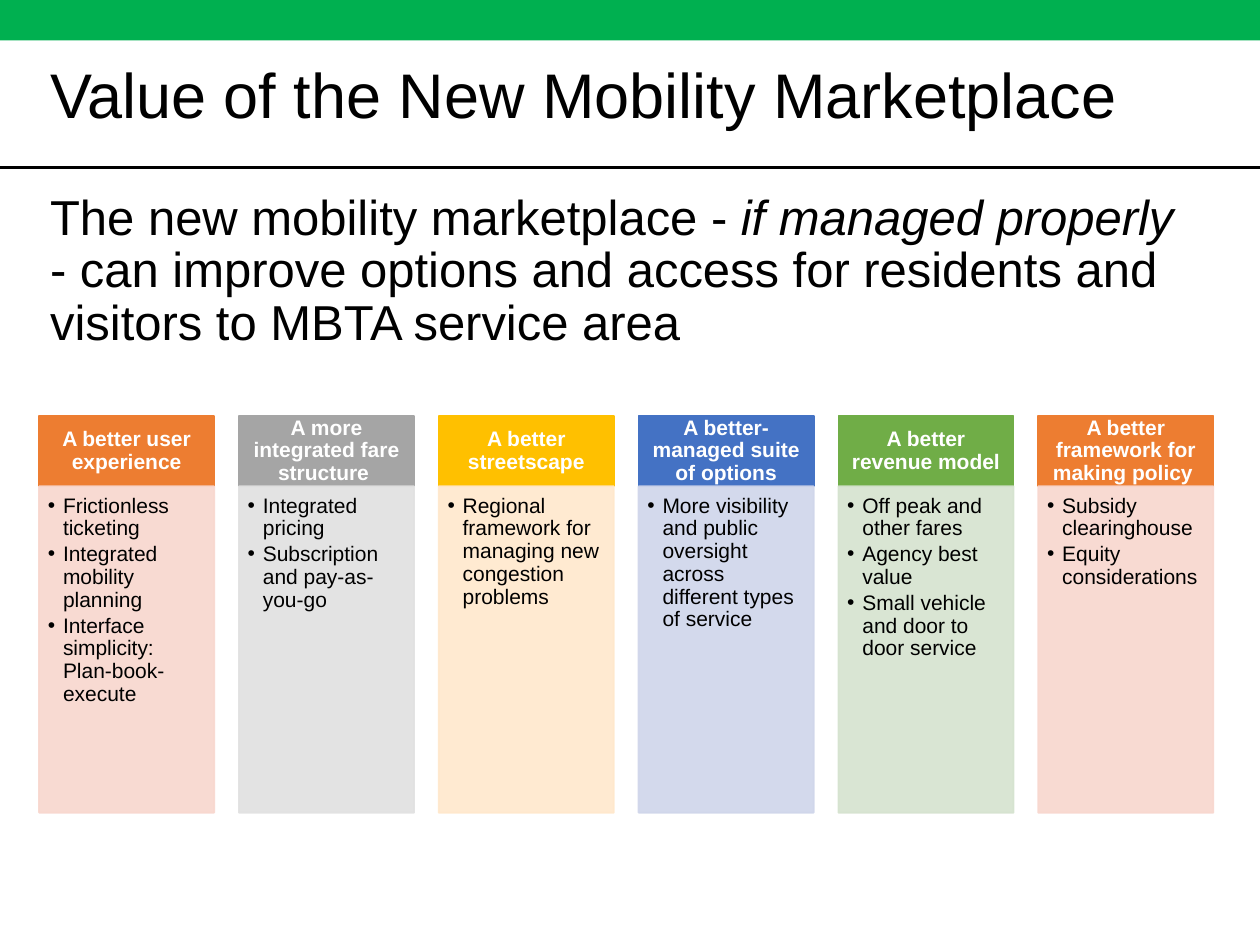
from dataclasses import dataclass

from lxml import etree
from pptx import Presentation
from pptx import util as u
from pptx.dml.color import RGBColor
from pptx.enum import shapes, text
from pptx.oxml import ns
from pptx.util import Inches


@dataclass(frozen=True)
class Theme:
    font: str = "Arial"
    ink: str = "000000"
    white: str = "FFFFFF"
    band: str = "00B050"
    title_size: int = 36
    lead_size: int = 28
    card_size: int = 12
    line_spacing: float = 0.9
    panel_opacity: int = 90


THEME = Theme()

# Heading colour, panel colour
ORANGE = ("ED7D31", "F8D7CE")
GREY = ("A5A5A5", "E1E1E1")
GOLD = ("FFC000", "FFE8CC")
BLUE = ("4472C4", "CFD5EA")
GREEN = ("70AD47", "D5E3CF")

BENEFITS = [
    (ORANGE, "A better user experience",
     ["Frictionless ticketing", "Integrated mobility planning",
      "Interface simplicity: Plan-book-execute"]),
    (GREY, "A more integrated fare structure ",
     ["Integrated pricing", "Subscription and pay-as-you-go"]),
    (GOLD, "A better streetscape",
     ["Regional framework for managing new congestion problems"]),
    (BLUE, "A better-managed suite of options",
     ["More visibility and public oversight across different types of service"]),
    (GREEN, "A better revenue model",
     ["Off peak and other fares", "Agency best value",
      "Small vehicle and door to door service"]),
    (ORANGE, "A better framework for making policy ",
     ["Subsidy clearinghouse", "Equity considerations"]),
]


def rgb(value):
    return RGBColor.from_string(value)


def add_child(parent, tag, **attributes):
    return etree.SubElement(parent, ns.qn(tag), attributes)


def set_margins(text_frame, left, top, right, bottom):
    text_frame.word_wrap = True
    text_frame.margin_left, text_frame.margin_top = Inches(left), Inches(top)
    text_frame.margin_right, text_frame.margin_bottom = Inches(right), Inches(bottom)


def style_paragraph(paragraph, size, color=THEME.ink, align=text.PP_ALIGN.LEFT):
    paragraph.alignment = align
    paragraph.line_spacing = THEME.line_spacing
    for run in paragraph.runs:
        run.font.name = THEME.font
        run.font.size = u.Pt(size)
        run.font.color.rgb = rgb(color)


def add_rectangle(slide, box, color, outlined=True, opacity=100):
    shape = slide.shapes.add_shape(
        shapes.MSO_SHAPE.RECTANGLE, *(Inches(value) for value in box))
    shape.shadow.inherit = False
    shape.fill.solid()
    shape.fill.fore_color.rgb = rgb(color)
    if outlined:
        shape.line.color.rgb = rgb(color)
        shape.line.width = u.Pt(1)
    else:
        shape.line.fill.background()
    if opacity < 100:
        for color_element in shape.element.spPr.iter(ns.qn("a:srgbClr")):
            add_child(color_element, "a:alpha", val=str(opacity * 1000))
    return shape


def add_text_box(slide, box, runs, size, anchor):
    """Place one paragraph made of (words, italic) runs."""
    shape = slide.shapes.add_textbox(*(Inches(value) for value in box))
    set_margins(shape.text_frame, 0.1, 0.05, 0.1, 0.05)
    shape.text_frame.vertical_anchor = anchor
    paragraph = shape.text_frame.paragraphs[0]
    for words, italic in runs:
        run = paragraph.add_run()
        run.text = words
        run.font.italic = italic
    style_paragraph(paragraph, size)


def add_header(slide, box):
    left, top, width, height = box
    add_rectangle(slide, (left, top, width, 0.32), THEME.band, outlined=False)
    rule_top = Inches(top + height)
    rule = slide.shapes.add_connector(
        shapes.MSO_CONNECTOR.STRAIGHT,
        Inches(left), rule_top, Inches(left + width), rule_top)
    rule.line.color.rgb = rgb(THEME.ink)
    rule.line.width = u.Pt(1.5)
    add_child(rule.element.spPr, "a:effectLst")
    add_text_box(slide, (left + 0.3, top + 0.4, 9.33, 0.75),
                 [("Value of the New Mobility Marketplace", False)],
                 THEME.title_size, text.MSO_ANCHOR.MIDDLE)


def add_lead(slide, box):
    add_text_box(slide, box, [
        ("The new mobility marketplace - ", False),
        ("if managed properly", True),
        (" - can improve options and access for residents and visitors "
         "to MBTA service area", False),
    ], THEME.lead_size, text.MSO_ANCHOR.TOP)


def add_benefit(slide, box, colors, heading, points):
    left, top, width, height = box
    heading_height = 0.56
    heading_color, panel_color = colors

    # Heading
    shape = add_rectangle(slide, (left, top, width, heading_height), heading_color)
    set_margins(shape.text_frame, 0.09, 0.05, 0.09, 0.05)
    shape.text_frame.vertical_anchor = text.MSO_ANCHOR.MIDDLE
    shape.text_frame.text = heading
    paragraph = shape.text_frame.paragraphs[0]
    style_paragraph(paragraph, THEME.card_size, THEME.white, text.PP_ALIGN.CENTER)
    paragraph.runs[0].font.bold = True

    # Panel with bullets
    panel = add_rectangle(
        slide, (left, top + heading_height, width, height - heading_height),
        panel_color, opacity=THEME.panel_opacity)
    set_margins(panel.text_frame, 0.07, 0.07, 0.09, 0.1)
    panel.text_frame.vertical_anchor = text.MSO_ANCHOR.TOP
    panel.text_frame.text = "\n".join(points)
    for paragraph in panel.text_frame.paragraphs:
        style_paragraph(paragraph, THEME.card_size)
        paragraph.space_after = u.Pt(1.8)
        properties = paragraph._p.get_or_add_pPr()
        properties.set("marL", str(Inches(0.12)))
        properties.set("indent", str(-Inches(0.12)))
        add_child(properties, "a:buFont", typeface=THEME.font)
        add_child(properties, "a:buChar", char="•")


def add_benefits(slide, box):
    left, top, width, height = box
    column_width = 1.39
    pitch = (width - column_width) / (len(BENEFITS) - 1)
    for index, benefit in enumerate(BENEFITS):
        add_benefit(slide, (left + index * pitch, top, column_width, height), *benefit)


def main():
    presentation = Presentation()
    presentation.slide_width, presentation.slide_height = Inches(10), Inches(7.5)
    slide = presentation.slides.add_slide(presentation.slide_layouts[6])
    add_header(slide, (0, 0, 10, 1.33))
    add_lead(slide, (0.3, 1.48, 9.33, 1.82))
    add_benefits(slide, (0.31, 3.3, 9.32, 3.15))
    presentation.save("out.pptx")


if __name__ == "__main__":
    main()
